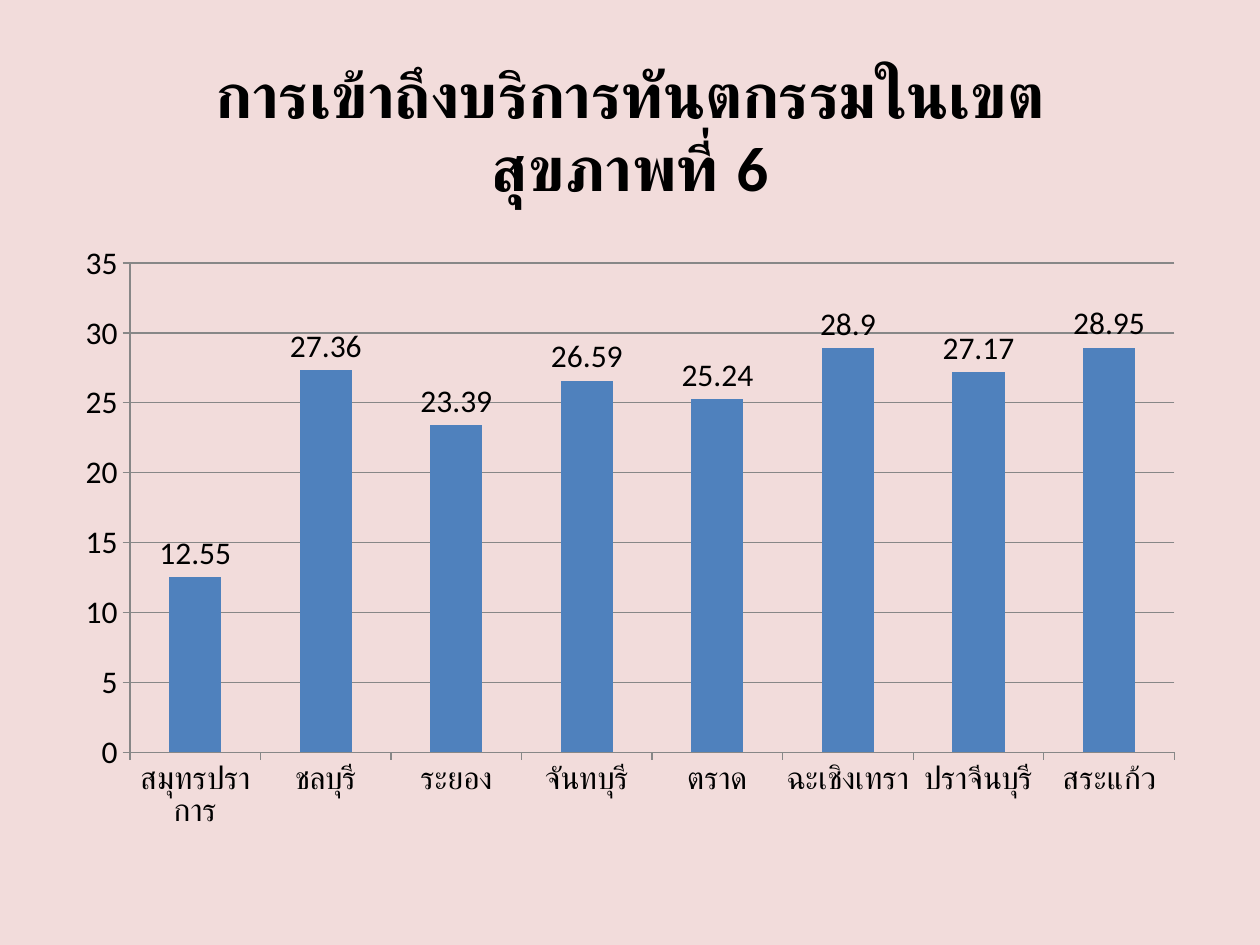
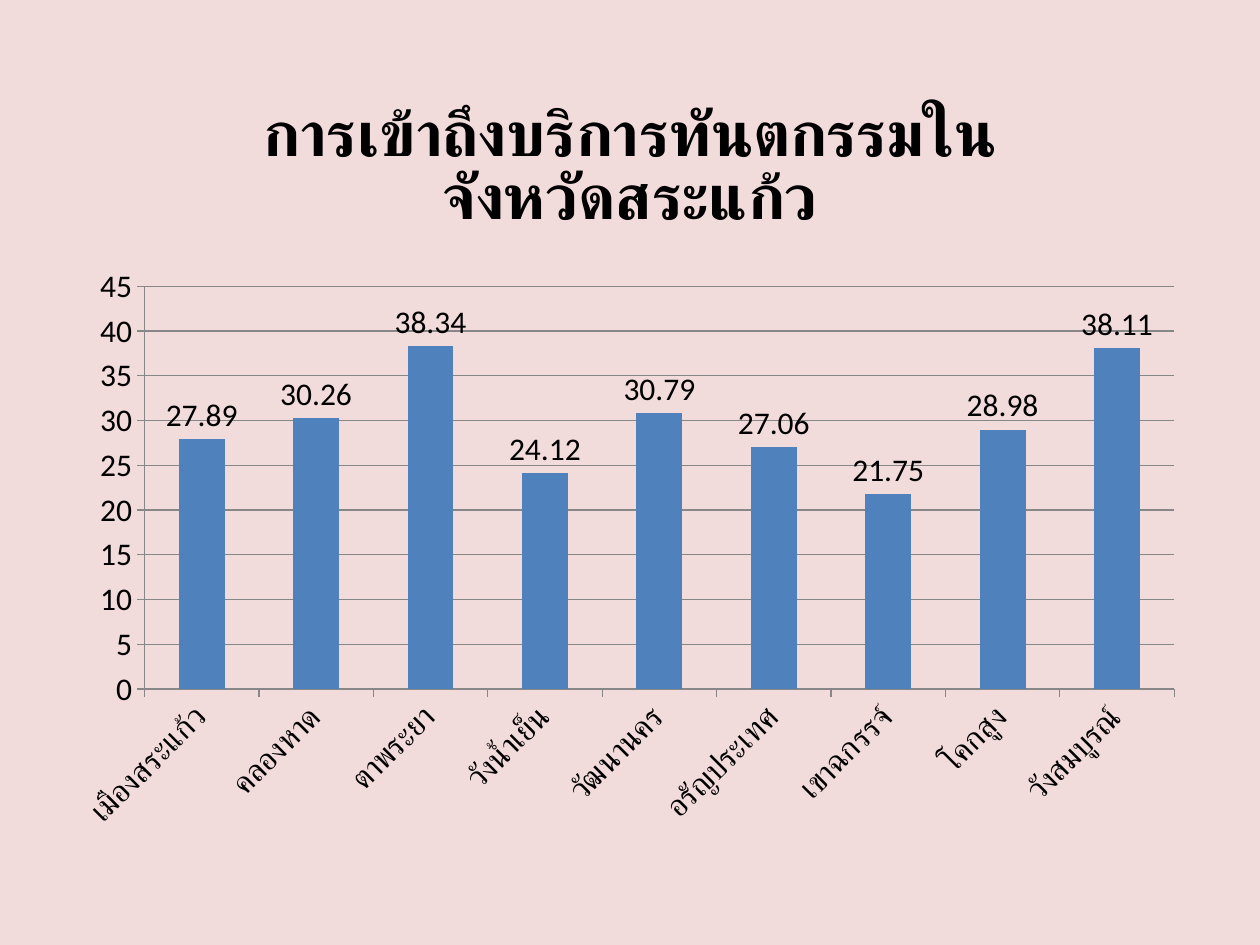
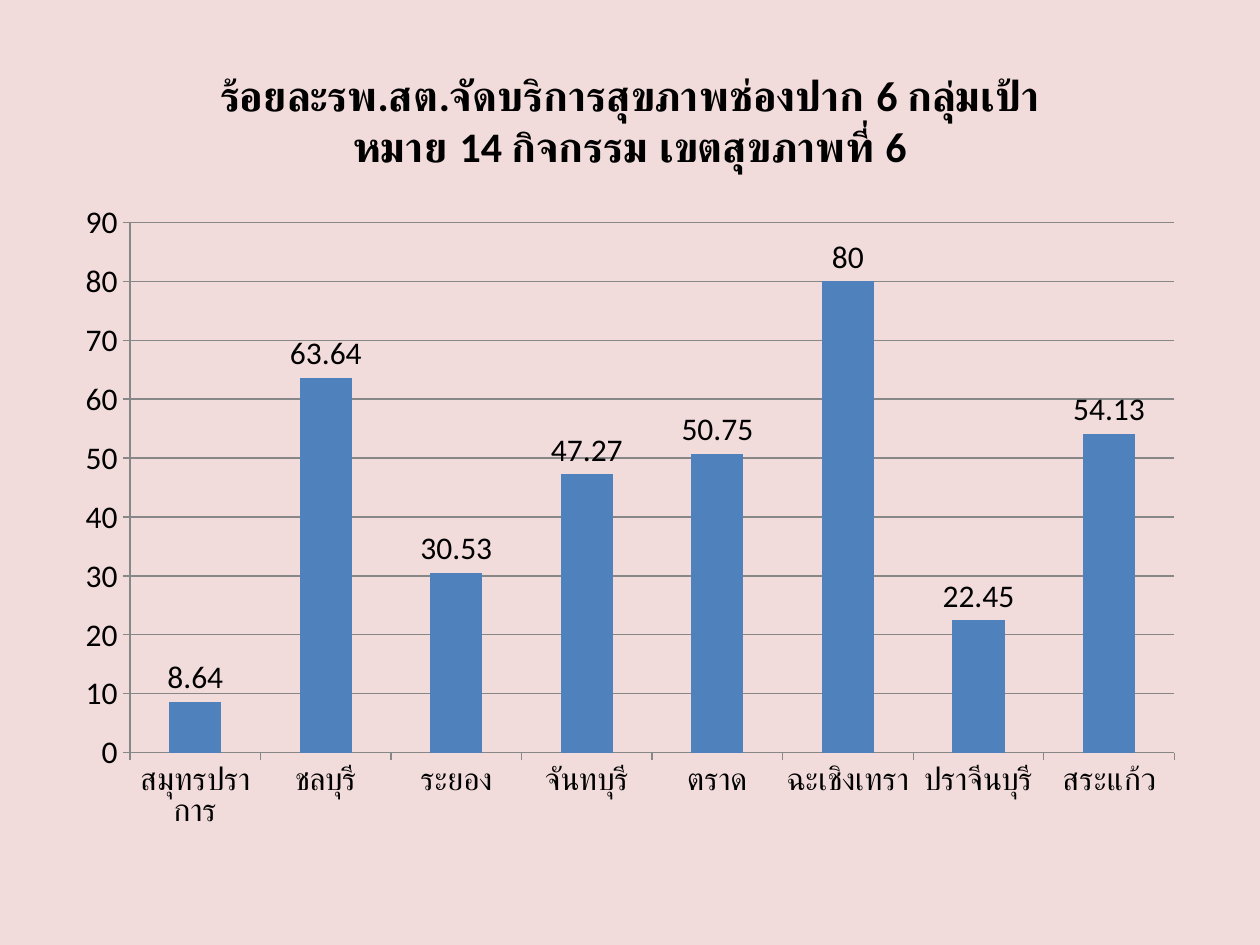
from pptx import Presentation
from pptx.chart.data import CategoryChartData
from pptx.dml.color import RGBColor
from pptx.enum.chart import XL_CHART_TYPE, XL_LABEL_POSITION, XL_TICK_MARK
from pptx.util import Cm, Pt

COLUMN_CLUSTERED = XL_CHART_TYPE.COLUMN_CLUSTERED
OUTSIDE_END = XL_LABEL_POSITION.OUTSIDE_END
TICK_OUTSIDE = XL_TICK_MARK.OUTSIDE
TICK_NONE = XL_TICK_MARK.NONE

PINK = RGBColor(0xF2, 0xDC, 0xDB)
BLUE = RGBColor(0x4F, 0x81, 0xBD)
GRAY = RGBColor(0x87, 0x87, 0x87)
BLACK = RGBColor(0x00, 0x00, 0x00)
FONT = "Calibri"

SLIDE_WIDTH, SLIDE_HEIGHT = Cm(25.4), Cm(19.05)
BLANK_LAYOUT = 6
SIDE_MARGIN = Cm(1.27)
CHART_BOTTOM = Cm(17.02)

PROVINCES = ["สมุทรปราการ", "ชลบุรี", "ระยอง", "จันทบุรี", "ตราด",
             "ฉะเชิงเทรา", "ปราจีนบุรี", "สระแก้ว"]
DISTRICTS = ["เมืองสระแก้ว", "คลองหาด", "ตาพระยา", "วังน้ำเย็น", "วัฒนานคร",
             "อรัญประเทศ", "เขาฉกรรจ์", "โคกสูง", "วังสมบูรณ์"]

REGION_ACCESS = "การเข้าถึงบริการทันตกรรมในเขตสุขภาพที่ 6"
PROVINCE_ACCESS = "การเข้าถึงบริการทันตกรรมในจังหวัดสระแก้ว"
ORAL_SERVICES = ("ร้อยละรพ.สต.จัดบริการสุขภาพช่องปาก 6 กลุ่มเป้าหมาย "
                 "14 กิจกรรม เขตสุขภาพที่ 6")

CHARTS = [
    dict(title=REGION_ACCESS, title_size=Pt(36), series_name="Series 1",
         top=Cm(0.53), categories=PROVINCES, maximum=35, step=5,
         values=[12.55, 27.36, 23.39, 26.59, 25.24, 28.9, 27.17, 28.95]),
    dict(title=PROVINCE_ACCESS, title_size=Pt(36), series_name=PROVINCE_ACCESS,
         top=Cm(1.32), categories=DISTRICTS, maximum=45, step=5,
         values=[27.89, 30.26, 38.34, 24.12, 30.79, 27.06, 21.75, 28.98, 38.11]),
    dict(title=ORAL_SERVICES, title_size=Pt(24), series_name=ORAL_SERVICES,
         top=Cm(0.74), categories=PROVINCES, maximum=90, step=10,
         values=[8.64, 63.64, 30.53, 47.27, 50.75, 80, 22.45, 54.13]),
]


def format_font(font, size, bold=False):
    font.name = FONT
    font.size = size
    font.bold = bold
    font.color.rgb = BLACK


def add_chart_title(chart, text, size):
    chart.has_title = True
    chart.chart_title.include_in_layout = False
    run = chart.chart_title.text_frame.paragraphs[0].add_run()
    run.text = text
    format_font(run.font, size, bold=True)


def format_axes(chart, maximum, step):
    for axis in (chart.category_axis, chart.value_axis):
        axis.major_tick_mark = TICK_OUTSIDE
        axis.minor_tick_mark = TICK_NONE
        axis.format.line.color.rgb = GRAY
    value_axis = chart.value_axis
    value_axis.minimum_scale = 0
    value_axis.maximum_scale = maximum
    value_axis.major_unit = step
    value_axis.has_major_gridlines = True
    value_axis.major_gridlines.format.line.color.rgb = GRAY


def format_columns(plot):
    plot.gap_width = 150
    plot.vary_by_categories = False
    fill = plot.series[0].format.fill
    fill.solid()
    fill.fore_color.rgb = BLUE
    plot.has_data_labels = True
    labels = plot.data_labels
    labels.show_value = True
    labels.position = OUTSIDE_END
    format_font(labels.font, Pt(18))


def add_column_chart(slide, box, content):
    data = CategoryChartData()
    data.categories = content["categories"]
    data.add_series(content["series_name"], content["values"])
    chart = slide.shapes.add_chart(COLUMN_CLUSTERED, *box, data).chart
    chart.has_legend = False
    format_font(chart.font, Pt(18))
    add_chart_title(chart, content["title"], content["title_size"])
    format_axes(chart, content["maximum"], content["step"])
    format_columns(chart.plots[0])


def add_chart_slide(presentation, content):
    slide = presentation.slides.add_slide(presentation.slide_layouts[BLANK_LAYOUT])
    top = content["top"]
    box = (SIDE_MARGIN, top, SLIDE_WIDTH - 2 * SIDE_MARGIN, CHART_BOTTOM - top)
    add_column_chart(slide, box, content)


def main():
    presentation = Presentation()
    presentation.slide_width = SLIDE_WIDTH
    presentation.slide_height = SLIDE_HEIGHT
    background = presentation.slide_master.background.fill
    background.solid()
    background.fore_color.rgb = PINK
    for content in CHARTS:
        add_chart_slide(presentation, content)
    presentation.save("out.pptx")


if __name__ == "__main__":
    main()
